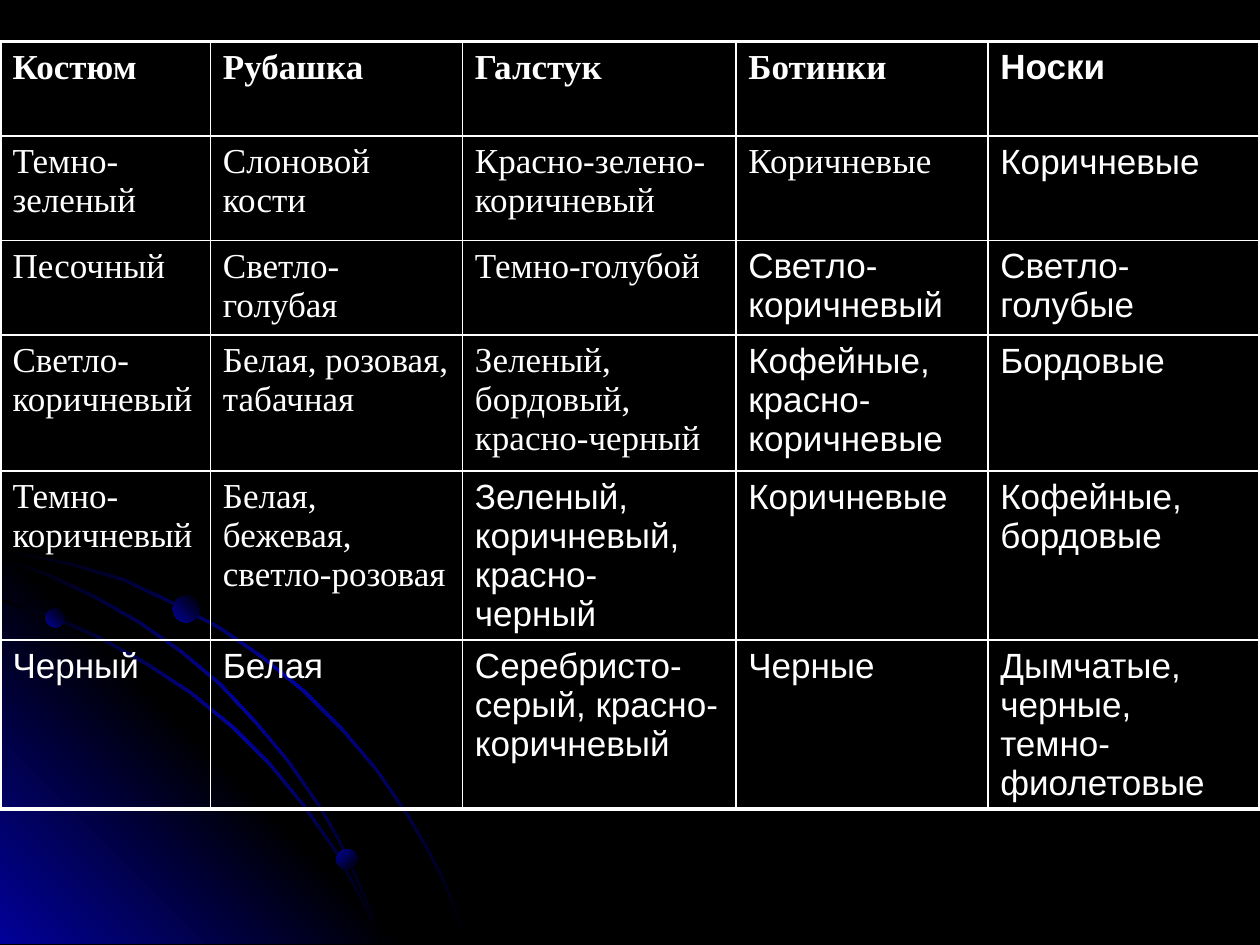
from dataclasses import dataclass

from lxml import etree
from pptx import Presentation
from pptx import util as u
from pptx.dml.color import RGBColor
from pptx.enum import shapes
from pptx.oxml import ns

PX = 9144  # EMU per px, 100 px to the inch
WIDTH, HEIGHT = 1000, 750


@dataclass(frozen=True)
class Theme:
    black: str = "000000"
    blue: str = "010199"
    white: str = "FFFFFF"
    serif: str = "Times New Roman"
    sans: str = "Arial"
    size: int = 20
    thin: float = 1
    thick: float = 2.25


T = Theme()


@dataclass(frozen=True)
class Ball:
    x: int
    y: int
    d: int
    angle: int


@dataclass(frozen=True)
class Row:
    height: int
    serif_cells: int  # leading cells set in the serif font
    texts: tuple[str, ...]


# Background decoration
WEDGE = [(0, 427), (322, 749), (0, 749)]
ARCS = [
    [(0, 437), (28, 442), (56, 448), (97, 460), (135, 478), (173, 498), (208, 522), (241, 549),
     (271, 579), (299, 612), (324, 649), (338, 673), (351, 698), (361, 723), (371, 749)],
    [(0, 476), (40, 489), (78, 506), (116, 527), (151, 550), (184, 577), (214, 607),
     (241, 640), (266, 676), (286, 713), (295, 731), (302, 749)],
    [(0, 443), (37, 456), (75, 474), (110, 494), (143, 517), (174, 543), (203, 574),
     (228, 604), (253, 640), (268, 666), (281, 694), (293, 721), (302, 749)],
]
BALLS = [Ball(36, 483, 15, 315), Ball(267, 674, 16, 45), Ball(137, 473, 21, 315)]

# Wardrobe table
TABLE_TOP = 33
COLUMNS = [167, 200, 217, 200, 216]
ROWS = [
    Row(75, 4, ("Костюм", "Рубашка", "Галстук", "Ботинки", "Носки")),
    Row(83, 4, ("Темно-зеленый", "Слоновой кости", "Красно-зелено-коричневый",
                "Коричневые", "Коричневые")),
    Row(75, 3, ("Песочный", "Светло-голубая", "Темно-голубой",
                "Светло-коричневый", "Светло- голубые")),
    Row(108, 3, ("Светло-коричневый", "Белая, розовая, табачная",
                 "Зеленый, бордовый, красно-черный",
                 "Кофейные, красно-коричневые", "Бордовые")),
    Row(134, 2, ("Темно-коричневый", "Белая, бежевая, светло-розовая",
                 "Зеленый, коричневый, красно- черный",
                 "Коричневые", "Кофейные, бордовые")),
    Row(133, 0, ("Черный", "Белая", "Серебристо-серый, красно-коричневый",
                 "Черные", "Дымчатые, черные, темно-фиолетовые")),
]


def solid_xml(parent, color: str) -> None:
    fill = etree.SubElement(parent, ns.qn("a:solidFill"))
    etree.SubElement(fill, ns.qn("a:srgbClr"), val=color)


def paint_gradient(sp, colors: list[str], angle: int) -> None:
    """Fill a shape with evenly spaced colours and remove its outline and shadow."""
    sp.shadow.inherit = False
    sp.line.fill.background()
    sp.fill.gradient()
    sp.fill.gradient_angle = 0
    grad = sp._element.spPr.find(ns.qn("a:gradFill"))
    stops = grad.find(ns.qn("a:gsLst"))
    for stop in list(stops):
        stops.remove(stop)
    for i, color in enumerate(colors):
        pos = str(100000 * i // (len(colors) - 1))
        stop = etree.SubElement(stops, ns.qn("a:gs"), pos=pos)
        etree.SubElement(stop, ns.qn("a:srgbClr"), val=color)
    grad.find(ns.qn("a:lin")).set("ang", str(angle * 60000))


def draw_outline(slide, points: list[tuple[int, int]], colors: list[str], angle: int) -> None:
    builder = slide.shapes.build_freeform(*points[0], scale=PX)
    builder.add_line_segments(points[1:], close=True)
    paint_gradient(builder.convert_to_shape(), colors, angle)


def draw_arc(slide, points: list[tuple[int, int]]) -> None:
    """Draw a thin ribbon, with one edge on each side of the points."""
    upper = [(x + 1 if x else 0, y - 1) for x, y in points]
    lower = [(x, min(y + 1, HEIGHT)) for x, y in reversed(points)]
    draw_outline(slide, upper + lower, [T.black, T.blue, T.black], 45)


def draw_ball(slide, ball: Ball) -> None:
    sp = slide.shapes.add_shape(shapes.MSO_SHAPE.OVAL, ball.x * PX, ball.y * PX,
                                ball.d * PX, ball.d * PX)
    paint_gradient(sp, [T.blue, T.black], ball.angle)


def write(tf, content: str, *, font: str, bold: bool = False,
          size: int = T.size, color: str = T.white) -> None:
    tf.word_wrap = True
    r = tf.paragraphs[0].add_run()
    r.text = content
    r.font.name, r.font.size, r.font.bold = font, u.Pt(size), bold
    r.font.color.rgb = RGBColor.from_string(color)


def set_borders(cell, **widths: float) -> None:
    tc_pr = cell._tc.get_or_add_tcPr()
    for i, side in enumerate("LRTB"):
        ln = etree.Element(ns.qn(f"a:ln{side}"), w=str(int(u.Pt(widths[side]))))
        solid_xml(ln, T.white)
        tc_pr.insert(i, ln)


def draw_table(slide) -> None:
    heights = [row.height for row in ROWS]
    frame = slide.shapes.add_table(len(ROWS), len(COLUMNS), 0, TABLE_TOP * PX,
                                   sum(COLUMNS) * PX, sum(heights) * PX)
    table = frame.table
    table.first_row = table.horz_banding = False
    for column, width in zip(table.columns, COLUMNS):
        column.width = width * PX
    last_row, last_col = len(ROWS) - 1, len(COLUMNS) - 1
    for i, row in enumerate(ROWS):
        table.rows[i].height = row.height * PX
        for j, content in enumerate(row.texts):
            cell = table.cell(i, j)
            cell.fill.background()
            write(cell.text_frame, content, bold=i == 0,
                  font=T.serif if j < row.serif_cells else T.sans)
            outer = {"L": j == 0, "R": j == last_col, "T": i == 0, "B": i == last_row}
            set_borders(cell, **{s: T.thick if o else T.thin for s, o in outer.items()})


def main() -> None:
    prs = Presentation()
    prs.slide_width, prs.slide_height = WIDTH * PX, HEIGHT * PX
    slide = prs.slides.add_slide(prs.slide_layouts[6])
    slide.background.fill.solid()
    slide.background.fill.fore_color.rgb = RGBColor.from_string(T.black)

    # Decoration, back to front
    draw_arc(slide, ARCS[0])
    draw_outline(slide, WEDGE, [T.blue, T.black, T.blue], 315)
    for arc in ARCS[1:]:
        draw_arc(slide, arc)
    for ball in BALLS:
        draw_ball(slide, ball)

    draw_table(slide)
    prs.save("out.pptx")


if __name__ == "__main__":
    main()
